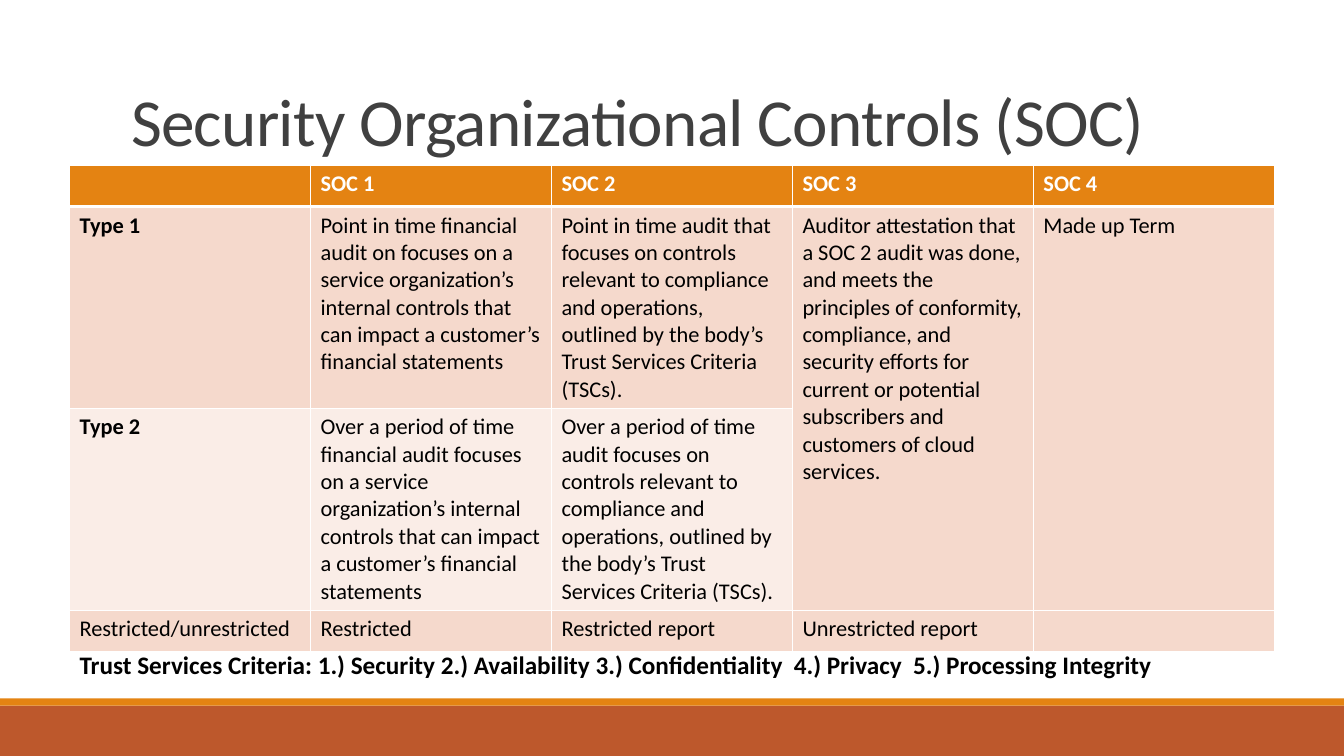
"""Build a slide that compares the SOC report types in a table."""
import pptx
import pptx.dml.color
import pptx.enum.shapes
import pptx.enum.text
import pptx.oxml
import pptx.oxml.ns
import pptx.util

Inches = pptx.util.Inches
Pt = pptx.util.Pt
FONT = "Calibri"
HUES = {
    "white": "FFFFFF",
    "black": "000000",
    "title": "404040",
    "head": "E48312",
    "foot": "BD582C",
    "dark": "F5D9CC",
    "light": "FAEDE7",
}
ROWS = [
    ["", "SOC 1", "SOC 2", "SOC 3", "SOC 4"],
    [
        "Type 1",
        "Point in time financial audit on focuses on a service organization’s "
        "internal controls that can impact a customer’s financial statements",
        "Point in time audit that focuses on controls relevant to compliance and "
        "operations, outlined by the body’s Trust Services Criteria (TSCs).",
        "Auditor attestation that a SOC 2 audit was done, and meets the principles "
        "of conformity, compliance, and security efforts for current or potential "
        "subscribers and customers of cloud services.",
        "Made up Term",
    ],
    [
        "Type 2",
        "Over a period of time financial audit focuses on a service organization’s "
        "internal controls that can impact a customer’s financial statements",
        "Over a period of time audit focuses on controls relevant to compliance and "
        "operations, outlined by the body’s Trust Services Criteria (TSCs).",
        "",
        "",
    ],
    ["Restricted/unrestricted", "Restricted", "Restricted report", "Unrestricted report", ""],
]
FILLS = ["head", "dark", "light", "dark"]
HEIGHTS = [0.41, 2, 2, 0.41]
BOLD = {"Type 1", "Type 2"}


def color(name):
    """Return the named colour."""
    return pptx.dml.color.RGBColor.from_string(HUES[name])


def write(frame, text, size, hue, bold=False):
    """Add one run to the first paragraph and return it."""
    run = frame.paragraphs[0].add_run()
    run.text = text
    run.font.name = FONT
    run.font.size = Pt(size)
    run.font.bold = bold
    run.font.color.rgb = color(hue)
    return run


def band(slide, top, height, hue):
    """Draw a full-width strip."""
    strip = slide.shapes.add_shape(
        pptx.enum.shapes.MSO_SHAPE.RECTANGLE, 0, Inches(top), Inches(13.33), Inches(height)
    )
    strip.shadow.inherit = False
    strip.fill.solid()
    strip.fill.fore_color.rgb = color(hue)
    strip.line.fill.background()


def title(slide, text):
    """Place and format the title."""
    box = slide.shapes.title
    box.left, box.top = Inches(1.2), Inches(0.31)
    box.width, box.height = Inches(11), Inches(1.33)
    frame = box.text_frame
    frame.word_wrap = True
    frame.auto_size = pptx.enum.text.MSO_AUTO_SIZE.NONE
    frame.vertical_anchor = pptx.enum.text.MSO_ANCHOR.BOTTOM
    frame.paragraphs[0].alignment = pptx.enum.text.PP_ALIGN.LEFT
    frame.paragraphs[0].line_spacing = 0.85
    run = write(frame, text, 48, "title")
    run.font._element.set("spc", "-50")


def edge(cell, sides):
    """Draw white borders, given a width in points for each side."""
    props = cell._tc.get_or_add_tcPr()
    space = pptx.oxml.ns.nsdecls("a")
    for spot, (side, width) in enumerate(sides.items()):
        line = pptx.oxml.parse_xml(
            f'<a:ln{side} {space} w="{Pt(width)}"><a:solidFill>'
            f'<a:srgbClr val="{HUES["white"]}"/></a:solidFill></a:ln{side}>'
        )
        props.insert(spot, line)


def table(slide):
    """Add the table of report types."""
    frame = slide.shapes.add_table(
        len(ROWS), len(ROWS[0]), Inches(0.69), Inches(1.64), Inches(11.95), Inches(sum(HEIGHTS))
    )
    grid = frame.table
    for column in grid.columns:
        column.width = Inches(2.39)
    for r, texts in enumerate(ROWS):
        grid.rows[r].height = Inches(HEIGHTS[r])
        for c, text in enumerate(texts):
            cell = grid.cell(r, c)
            cell.fill.solid()
            cell.fill.fore_color.rgb = color(FILLS[r])
            edge(cell, {"L": 1, "R": 1, "T": 3 if r == 1 else 1, "B": 3 if r == 0 else 1})
            if text:
                hue = "white" if r == 0 else "black"
                write(cell.text_frame, text, 16, hue, r == 0 or text in BOLD)
    for c in (3, 4):
        grid.cell(1, c).merge(grid.cell(2, c))


def note(slide, text):
    """Add the line below the table."""
    box = slide.shapes.add_textbox(Inches(0.69), Inches(6.39), Inches(10.99), Inches(0.4))
    box.text_frame.word_wrap = True
    write(box.text_frame, text, 18, "black", True)


def main():
    """Build and save the slide."""
    deck = pptx.Presentation()
    deck.slide_width, deck.slide_height = Inches(13.33), Inches(7.5)
    slide = deck.slides.add_slide(deck.slide_layouts[5])
    band(slide, 7, 0.5, "foot")
    band(slide, 6.93, 0.07, "head")
    title(slide, "Security Organizational Controls (SOC)")
    table(slide)
    note(
        slide,
        "Trust Services Criteria: 1.) Security 2.) Availability 3.) Confidentiality  "
        "4.) Privacy  5.) Processing Integrity",
    )
    deck.save("out.pptx")


if __name__ == "__main__":
    main()
